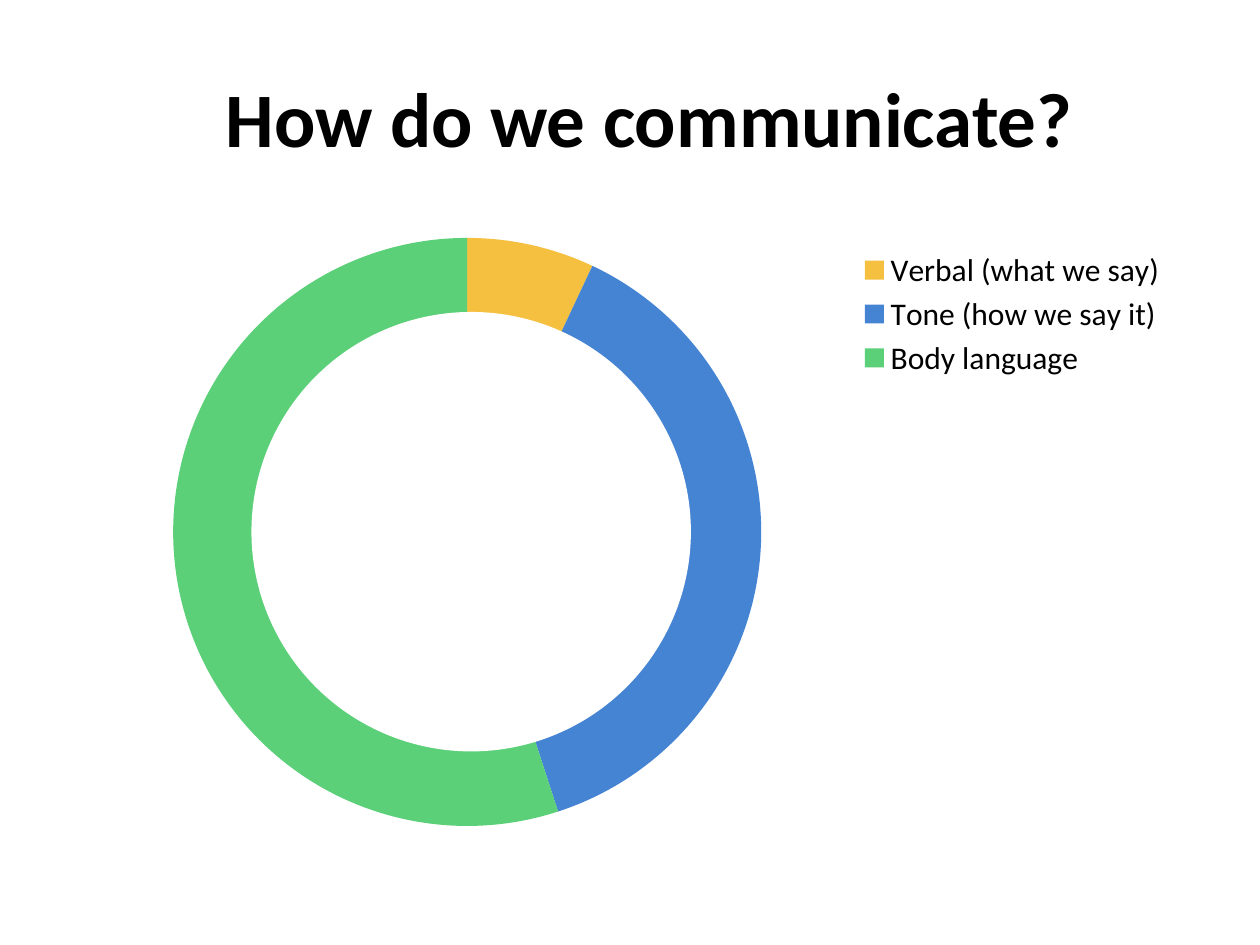
from lxml import etree
from pptx import Presentation
from pptx.chart.data import CategoryChartData
from pptx.dml.color import RGBColor
from pptx.enum.chart import XL_CHART_TYPE, XL_LEGEND_POSITION
from pptx.enum.shapes import MSO_SHAPE
from pptx.enum.text import MSO_ANCHOR, PP_ALIGN
from pptx.oxml.ns import qn
from pptx.util import Inches, Pt

PIE = XL_CHART_TYPE.PIE
RIGHT = XL_LEGEND_POSITION.RIGHT
OVAL = MSO_SHAPE.OVAL
MIDDLE = MSO_ANCHOR.MIDDLE
LEFT = PP_ALIGN.LEFT

SLICES = [
    ("Verbal (what we say)", 7, "F5C040"),
    ("Tone (how we say it)", 38, "4584D3"),
    ("Body language", 55, "5BD078"),
]


def rgb(value):
    return RGBColor.from_string(value)


def manual_layout(x, y, w, h, inner=False):
    layout = etree.Element(qn("c:layout"))
    manual = etree.SubElement(layout, qn("c:manualLayout"))
    settings = [("layoutTarget", "inner")] if inner else []
    settings += [("xMode", "edge"), ("yMode", "edge"),
                 ("x", x), ("y", y), ("w", w), ("h", h)]
    for tag, value in settings:
        etree.SubElement(manual, qn(f"c:{tag}")).set("val", str(value))
    return layout


class SlideBuilder:
    font = "Calibri"
    ink = "000000"
    paper = "FFFFFF"

    def __init__(self, prs):
        self.slide = prs.slides.add_slide(prs.slide_layouts[5])

    def style(self, font, size, bold=False):
        font.name = self.font
        font.size = Pt(size)
        font.bold = bold
        font.color.rgb = rgb(self.ink)

    def title(self, text, x, y, w, h):
        sp = self.slide.shapes.title
        sp.left, sp.top, sp.width, sp.height = map(Inches, (x, y, w, h))
        tf = sp.text_frame
        tf.text = text
        tf.word_wrap = True
        tf.vertical_anchor = MIDDLE
        p = tf.paragraphs[0]
        p.alignment = LEFT
        self.style(p.font, 44, bold=True)

    def pie(self, slices, x, y, w, h):
        data = CategoryChartData()
        data.categories = [name for name, _, _ in slices]
        data.add_series("Series 1", [value for _, value, _ in slices])
        chart = self.slide.shapes.add_chart(
            PIE, *map(Inches, (x, y, w, h)), data).chart
        chart.has_title = False
        self.style(chart.font, 18)
        plot = chart.plots[0]
        plot.vary_by_categories = True
        for i, (_, _, color) in enumerate(slices):
            fill = plot.series[0].points[i].format.fill
            fill.solid()
            fill.fore_color.rgb = rgb(color)
        chart.has_legend = True
        chart.legend.position = RIGHT
        chart.legend.include_in_layout = False
        self.place_parts(chart)

    def place_parts(self, chart):
        area = chart._chartSpace.chart.plotArea
        legend = chart.legend._element
        for part in (area, legend):
            for old in part.findall(qn("c:layout")):
                part.remove(old)
        area.insert(0, manual_layout(0.097, 0.028, 0.519, 0.943, inner=True))
        legend.find(qn("c:overlay")).addprevious(
            manual_layout(0.687, 0.04, 0.3, 0.22))

    def hole(self, x, y, size):
        sp = self.slide.shapes.add_shape(
            OVAL, *map(Inches, (x, y, size, size)))
        sp.shadow.inherit = False
        sp.fill.solid()
        sp.fill.fore_color.rgb = rgb(self.paper)
        sp.line.color.rgb = rgb(self.paper)
        sp.line.width = Pt(2)


def main():
    prs = Presentation()
    prs.slide_width, prs.slide_height = Inches(10), Inches(7.5)
    s = SlideBuilder(prs)
    s.title("How do we communicate?", 1.69, 0.3, 7.81, 1.25)
    s.pie(SLICES, 0.5, 1.75, 9, 4.95)
    s.hole(2.01, 2.49, 3.46)
    prs.save("out.pptx")


if __name__ == "__main__":
    main()
